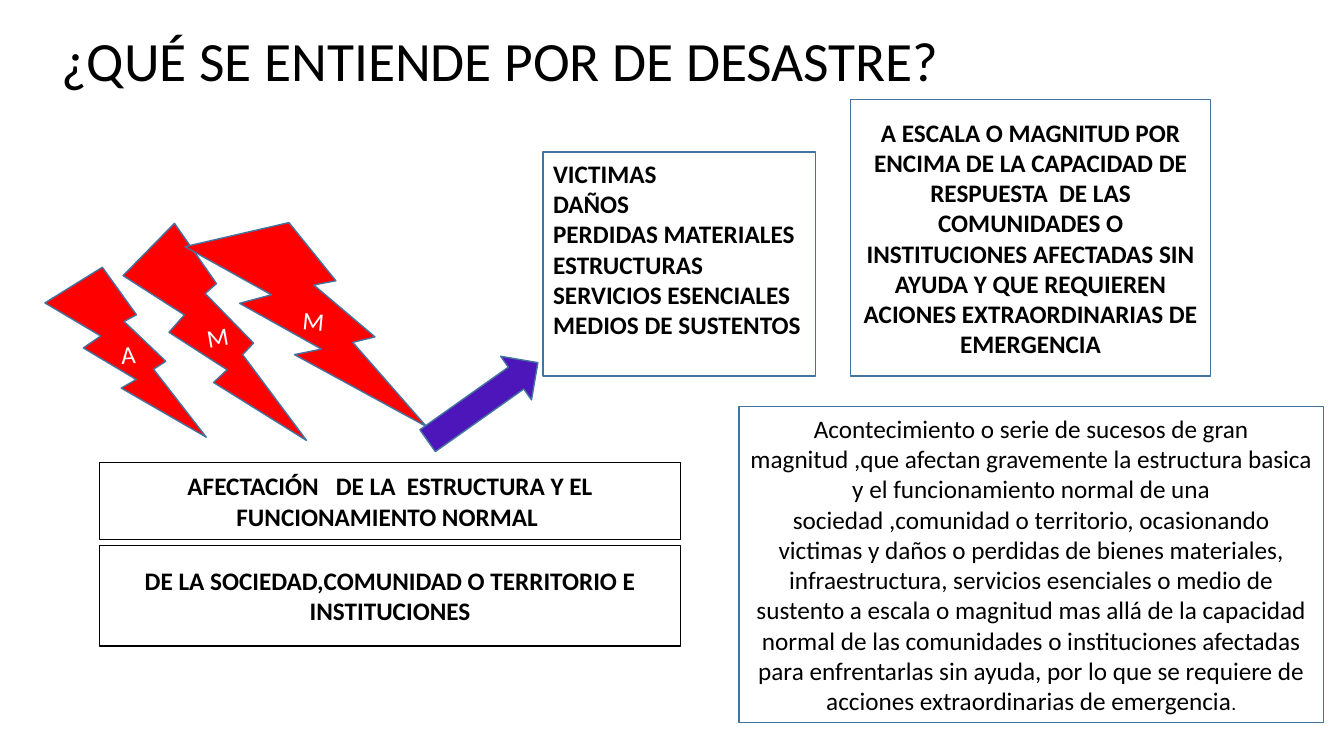
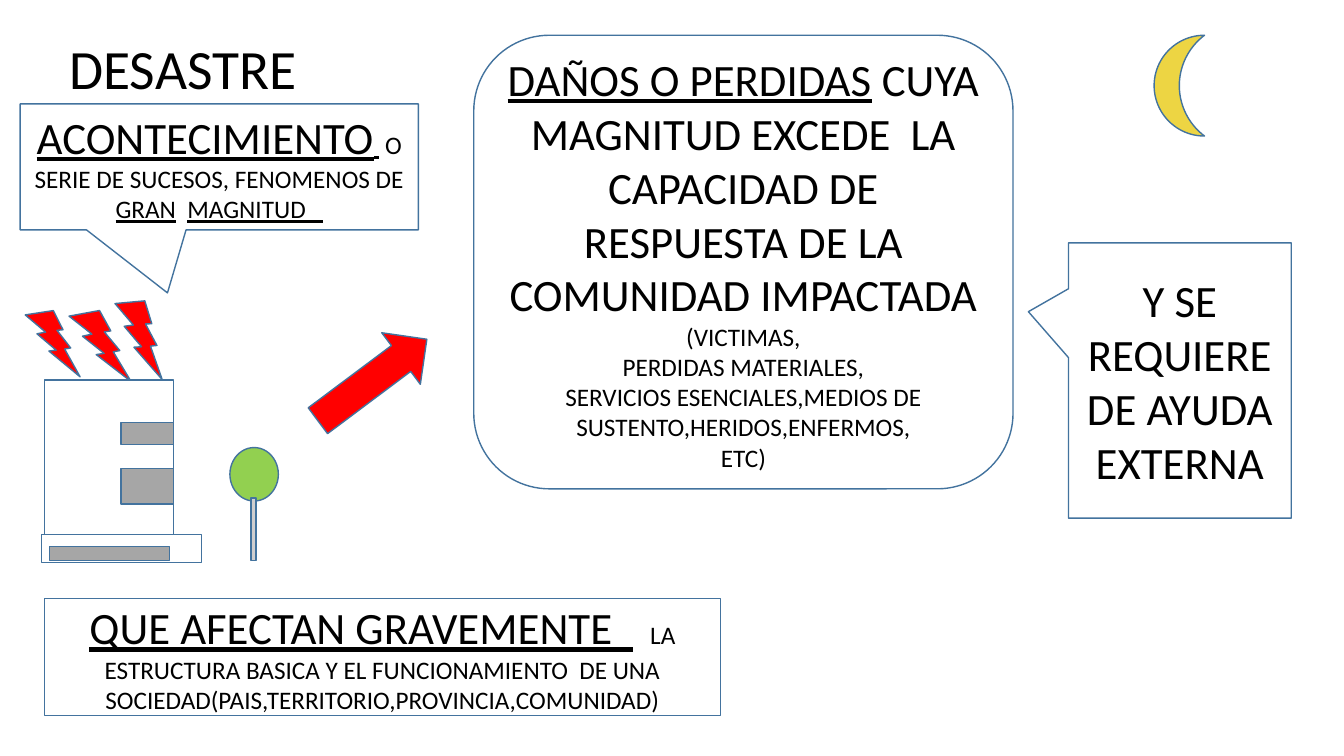
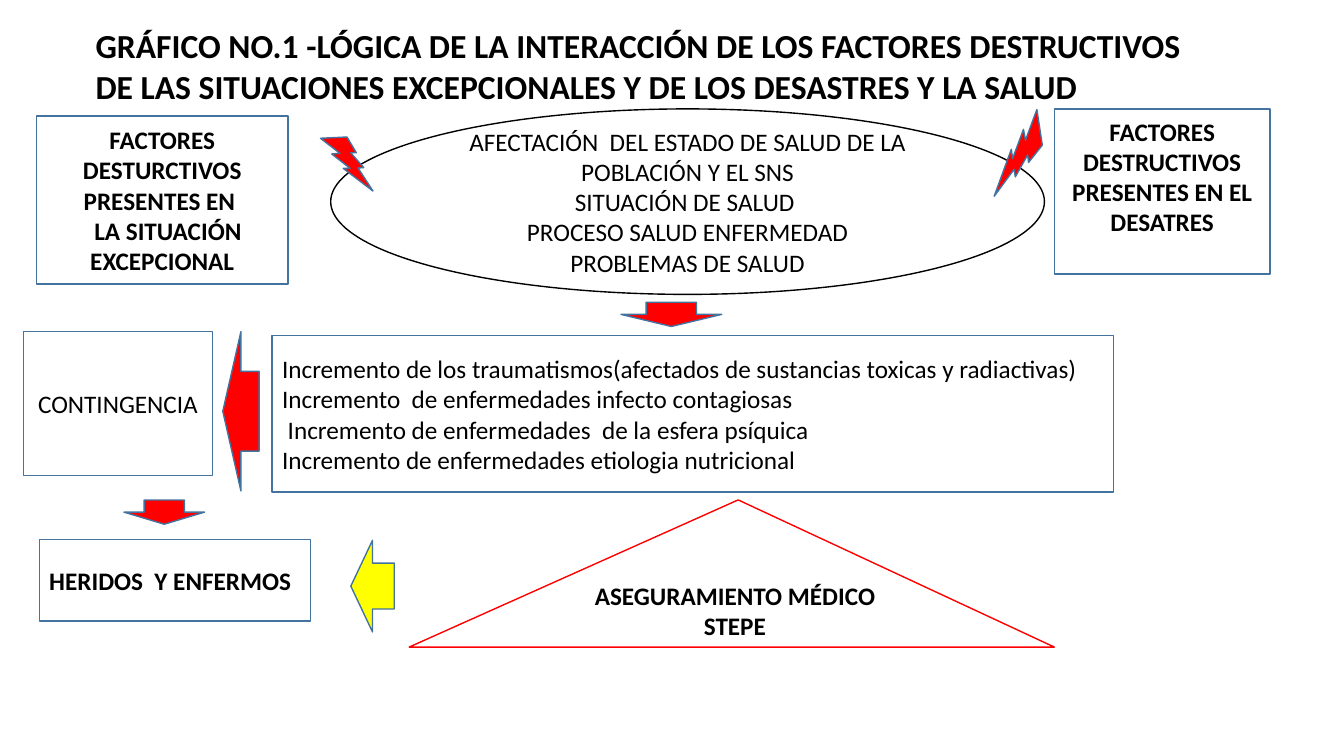
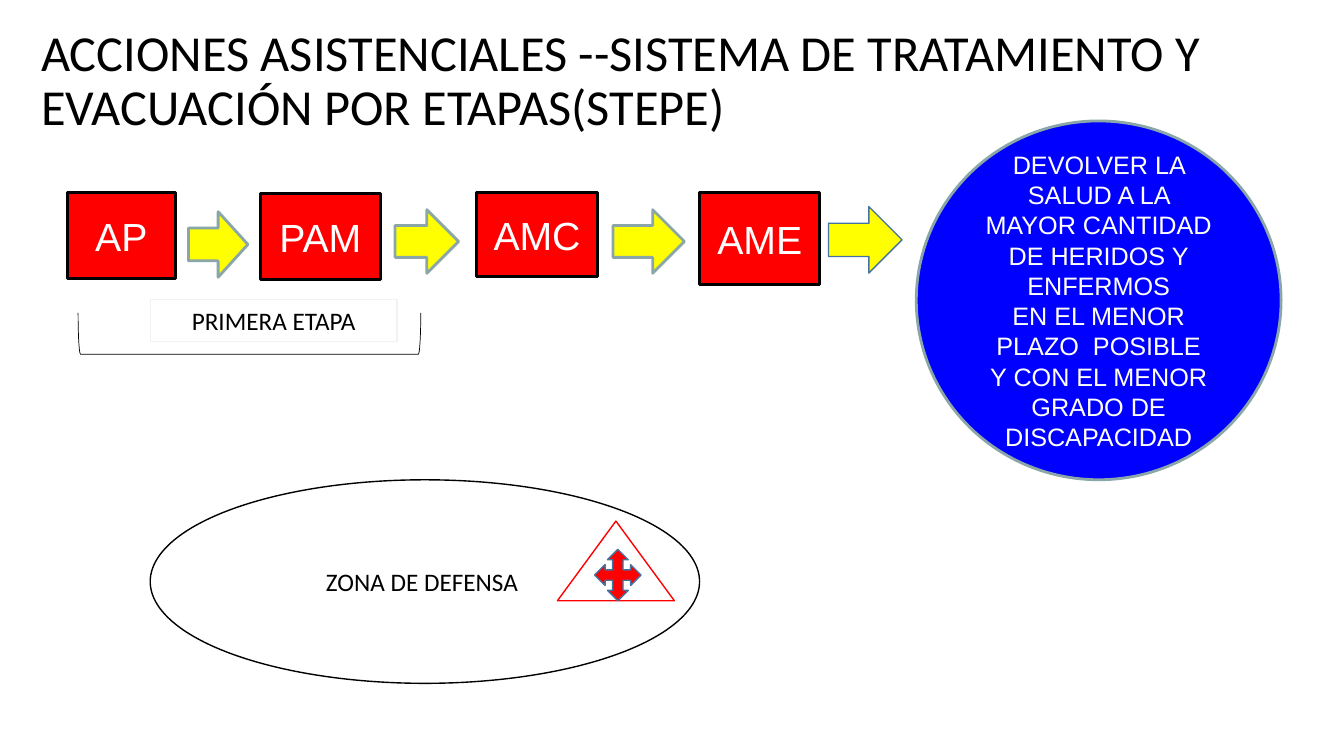
from dataclasses import dataclass

from pptx import Presentation
from pptx.dml.color import RGBColor
from pptx.enum.shapes import MSO_SHAPE
from pptx.enum.text import MSO_ANCHOR, PP_ALIGN
from pptx.util import Pt

RECT = MSO_SHAPE.RECTANGLE
ROUNDED = MSO_SHAPE.ROUNDED_RECTANGLE
ELLIPSE = MSO_SHAPE.OVAL
TRIANGLE = MSO_SHAPE.ISOSCELES_TRIANGLE
BOLT = MSO_SHAPE.LIGHTNING_BOLT
CALLOUT = MSO_SHAPE.RECTANGULAR_CALLOUT
MOON = MSO_SHAPE.MOON
BRACKET = MSO_SHAPE.RIGHT_BRACKET
ARROW_RIGHT = MSO_SHAPE.RIGHT_ARROW
ARROW_LEFT = MSO_SHAPE.LEFT_ARROW
ARROW_DOWN = MSO_SHAPE.DOWN_ARROW
ARROW_QUAD = MSO_SHAPE.QUAD_ARROW
LEFT, CENTER = PP_ALIGN.LEFT, PP_ALIGN.CENTER
TOP, MIDDLE = MSO_ANCHOR.TOP, MSO_ANCHOR.MIDDLE

BLACK = RGBColor(0x00, 0x00, 0x00)
WHITE = RGBColor(0xFF, 0xFF, 0xFF)
RED = RGBColor(0xFF, 0x00, 0x00)
YELLOW = RGBColor(0xFF, 0xFF, 0x00)
BLUE = RGBColor(0x00, 0x00, 0xFF)
VIOLET = RGBColor(0x4D, 0x16, 0xBA)
STEEL = RGBColor(0x43, 0x73, 0x9E)
SAGE = RGBColor(0x8A, 0xA6, 0xA8)
MOONLIGHT = RGBColor(0xED, 0xD5, 0x43)
LEAF = RGBColor(0x92, 0xD0, 0x50)
GRAY = RGBColor(0xA6, 0xA6, 0xA6)
TRUNK = RGBColor(0xD0, 0xCE, 0xCE)
PALE = RGBColor(0xF2, 0xF2, 0xF2)

BODY_FONT, STAGE_FONT = "Calibri", "Arial"
BODY, LARGE = 18, 32


@dataclass
class Run:
    """A piece of text that departs from the style of its paragraph."""
    text: str
    size: float = BODY
    underline: bool = False


def write(frame, paragraphs, size=BODY, bold=False, color=BLACK,
          font=BODY_FONT, align=CENTER, spacing=None):
    """Fill a frame; a paragraph is a string or a list of Run."""
    frame.word_wrap = True
    for index, content in enumerate(paragraphs):
        paragraph = frame.paragraphs[0] if index == 0 else frame.add_paragraph()
        paragraph.alignment = align
        if spacing:
            paragraph.line_spacing = spacing
        runs = [Run(content, size)] if isinstance(content, str) else content
        for part in runs:
            run = paragraph.add_run()
            run.text = part.text
            run.font.name = font
            run.font.size = Pt(part.size)
            run.font.bold = bold
            run.font.underline = part.underline
            run.font.color.rgb = color


def add_heading(slide, box, text, size=39.6, bold=False, anchor=MIDDLE, spacing=0.9):
    frame = slide.shapes.add_textbox(*map(Pt, box)).text_frame
    frame.vertical_anchor = anchor
    write(frame, [text], size, bold, align=LEFT, spacing=spacing)


def add_figure(slide, preset, box, fill=WHITE, line=STEEL, weight=1,
               rotation=0, adjustments=()):
    figure = slide.shapes.add_shape(preset, *map(Pt, box))
    figure.shadow.inherit = False
    figure.rotation = rotation
    for index, value in enumerate(adjustments):
        figure.adjustments[index] = value
    if fill is None:
        figure.fill.background()
    else:
        figure.fill.solid()
        figure.fill.fore_color.rgb = fill
    figure.line.color.rgb = line
    figure.line.width = Pt(weight)
    return figure


def add_panel(slide, box, paragraphs, preset=RECT, line=STEEL, adjustments=(),
              bottom_inset=3.6, **style):
    """White outlined figure with text."""
    panel = add_figure(slide, preset, box, line=line, adjustments=adjustments)
    panel.text_frame.margin_bottom = Pt(bottom_inset)
    write(panel.text_frame, paragraphs, **style)


def add_bolt(slide, box, rotation, letter=None):
    bolt = add_figure(slide, BOLT, box, RED, rotation=rotation)
    if letter:
        write(bolt.text_frame, [letter], color=WHITE)


def build_definition(slide):
    add_heading(slide, (36.7, 20.2, 828, 51), "¿QUÉ SE ENTIENDE POR DE DESASTRE?")
    add_panel(slide, (71.3, 330.5, 414.7, 54.7),
              ["AFECTACIÓN   DE LA  ESTRUCTURA Y EL FUNCIONAMIENTO NORMAL "],
              line=BLACK, bold=True)
    add_panel(slide, (71.3, 389.5, 414.7, 72),
              ["DE LA SOCIEDAD,COMUNIDAD O TERRITORIO E INSTITUCIONES"],
              line=BLACK, bold=True)
    add_bolt(slide, (34.6, 190, 108.7, 126), 356.2, "A")
    add_bolt(slide, (96.5, 156.2, 108.7, 169.2), 350, "M")
    add_bolt(slide, (127.4, 160.6, 184.3, 135.4), 5.6, "M")
    add_figure(slide, ARROW_RIGHT, (296.6, 267.8, 96.5, 38.2), VIOLET, rotation=324.7)
    add_panel(slide, (388, 108.7, 194.4, 159.8),
              ["VICTIMAS", "DAÑOS", "PERDIDAS MATERIALES", "ESTRUCTURAS",
               "SERVICIOS ESENCIALES", "MEDIOS DE SUSTENTOS"],
              bold=True, align=LEFT, bottom_inset=25.2)
    add_panel(slide, (607.7, 71.3, 257, 197.3),
              ["A ESCALA O MAGNITUD POR ENCIMA DE LA CAPACIDAD DE RESPUESTA  DE LAS "
               "COMUNIDADES O INSTITUCIONES AFECTADAS SIN AYUDA Y QUE REQUIEREN "
               "ACIONES EXTRAORDINARIAS DE EMERGENCIA"], bold=True)
    add_panel(slide, (527.8, 290.2, 417.6, 226),
              [[Run("Acontecimiento o serie de sucesos de gran magnitud ,que afectan "
                    "gravemente la estructura basica y el funcionamiento normal de una "
                    "sociedad ,comunidad o territorio, ocasionando victimas y daños o "
                    "perdidas de bienes materiales, infraestructura, servicios esenciales "
                    "o medio de sustento a escala o magnitud mas allá de la capacidad "
                    "normal de las comunidades o instituciones afectadas para "
                    "enfrentarlas sin ayuda, por lo que se requiere de acciones "
                    "extraordinarias de emergencia"),
                Run(".", 14)]])


def build_scene(slide):
    add_heading(slide, (42.5, 25.2, 573, 51.8), "DESASTRE")
    add_panel(slide, (31.7, 427.7, 483, 83.5),
              [[Run("QUE AFECTAN GRAVEMENTE  ", LARGE, True),
                Run("   LA ESTRUCTURA BASICA Y EL FUNCIONAMIENTO  DE UNA "
                    "SOCIEDAD(PAIS,TERRITORIO,PROVINCIA,COMUNIDAD)")]])
    add_bolt(slide, (14.4, 222.5, 48.2, 41.8), 13)
    add_bolt(slide, (46, 222.5, 52.6, 45.4), 11.2)
    add_figure(slide, ARROW_RIGHT, (217.4, 248.4, 97.2, 46), RED, rotation=323.2)
    add_panel(slide, (338.4, 25.2, 385.2, 324),
              [[Run("DAÑOS O PERDIDAS", LARGE, True),
                Run(" CUYA MAGNITUD EXCEDE  LA CAPACIDAD DE RESPUESTA DE LA "
                    "COMUNIDAD IMPACTADA", LARGE)],
               "(VICTIMAS,", "PERDIDAS MATERIALES,",
               "SERVICIOS ESENCIALES,MEDIOS DE SUSTENTO,HERIDOS,ENFERMOS,", "ETC)"],
              preset=ROUNDED)
    add_bolt(slide, (75.6, 215.3, 49.7, 49), 19.2)
    add_panel(slide, (763.2, 173.5, 159.1, 196.6), ["Y SE REQUIERE DE AYUDA EXTERNA"],
              preset=CALLOUT, adjustments=(-0.68, -0.25), size=LARGE)
    add_panel(slide, (14.4, 74.2, 284.4, 90),
              [[Run("ACONTECIMIENTO", LARGE, True), Run(" ", underline=True),
                Run(" O SERIE DE SUCESOS, FENOMENOS DE "),
                Run("GRAN", underline=True), Run("  "),
                Run("MAGNITUD   ", underline=True)]],
              preset=CALLOUT, adjustments=(-0.13, 1))
    add_figure(slide, MOON, (824.4, 25.2, 36, 72), MOONLIGHT)

    house = (31.7, 271.4, 92.2, 111.6)
    porch = (29.5, 381.6, 114.5, 20.2)
    for wall in (house, porch):
        add_figure(slide, RECT, wall)
    upper_window = (86.4, 301.7, 37.4, 15.8)
    lower_window = (86.4, 334.8, 37.4, 25.2)
    doorstep = (35.3, 390.2, 85.7, 10.1)
    for detail in (upper_window, lower_window, doorstep):
        add_figure(slide, RECT, detail, GRAY)
    add_figure(slide, ELLIPSE, (164.2, 319.7, 34.6, 38.2), LEAF)
    add_figure(slide, RECT, (179.3, 355.7, 3.6, 44.6), TRUNK)


def build_interaction(slide):
    add_panel(slide, (194.4, 239.8, 601.2, 111.6),
              ["Incremento de los traumatismos(afectados de sustancias toxicas y radiactivas)",
               "Incremento  de enfermedades infecto contagiosas",
               " Incremento de enfermedades  de la esfera psíquica",
               "Incremento de enfermedades etiologia nutricional"], align=LEFT)
    add_panel(slide, (25.9, 82.8, 180, 120.2),
              ["FACTORES DESTURCTIVOS PRESENTES EN ", "  LA SITUACIÓN", "EXCEPCIONAL"],
              bold=True)
    add_panel(slide, (753.1, 77.8, 154.1, 118.1),
              ["FACTORES DESTRUCTIVOS PRESENTES EN EL DESATRES"],
              bold=True, bottom_inset=25.2)
    add_panel(slide, (28.1, 385.2, 193.7, 58.3), ["HERIDOS  Y ENFERMOS"],
              bold=True, align=LEFT)
    add_figure(slide, ARROW_LEFT, (108.7, 337, 17.3, 57.6), RED, rotation=270)
    add_panel(slide, (236.2, 77.8, 509.8, 132.5),
              ["AFECTACIÓN  DEL ESTADO DE SALUD DE LA POBLACIÓN Y EL SNS",
               "SITUACIÓN DE SALUD ", "PROCESO SALUD ENFERMEDAD", "PROBLEMAS DE SALUD"],
              preset=ELLIPSE, line=BLACK)
    add_bolt(slide, (225.4, 98.6, 46, 32.4), 15.1)
    add_bolt(slide, (696.2, 93.6, 64, 31.7), 94.1)
    add_figure(slide, ARROW_RIGHT, (470.9, 188.6, 17.3, 72), RED, rotation=90)
    add_heading(slide, (61.2, 14.4, 795, 65.5),
                "GRÁFICO NO.1 -LÓGICA DE LA INTERACCIÓN DE LOS FACTORES DESTRUCTIVOS "
                "DE LAS SITUACIONES EXCEPCIONALES Y DE LOS DESASTRES Y LA SALUD",
                size=24, bold=True, anchor=TOP, spacing=1)
    add_panel(slide, (292.3, 357.1, 460.8, 105.1), ["ASEGURAMIENTO MÉDICO", "STEPE"],
              preset=TRIANGLE, line=RED, adjustments=(0.51,), bold=True)
    add_figure(slide, ARROW_LEFT, (250.6, 385.9, 31, 65.5), YELLOW)
    add_panel(slide, (16.6, 236.9, 135.4, 103), ["CONTINGENCIA"])
    add_figure(slide, ARROW_DOWN, (115.2, 280.8, 113.8, 25.9), RED, rotation=90)


def build_stages(slide):
    add_heading(slide, (22.3, 20.9, 909.4, 75.6),
                "ACCIONES ASISTENCIALES --SISTEMA DE TRATAMIENTO Y EVACUACIÓN POR "
                "ETAPAS(STEPE)", size=36)
    stages = (("AP", (48.2, 137.5, 77, 61.2)), ("PAM", (185.8, 138.2, 86, 61.2)),
              ("AMC", (340.6, 137.5, 86, 59.8)), ("AME", (499.7, 137.5, 86, 65.5)))
    for name, box in stages:
        stage = add_figure(slide, RECT, box, RED, BLACK, 2)
        write(stage.text_frame, [name], 28, color=WHITE, font=STAGE_FONT)
    for box in ((134.6, 151.2, 42.5, 46.8), (282.2, 149.8, 45.4, 45.4),
                (437.8, 149.8, 51.1, 45.4)):
        add_figure(slide, ARROW_RIGHT, box, YELLOW, SAGE, 2)
    add_figure(slide, BRACKET, (163.4, 115.9, 29.5, 244.8), None, BLACK, 0.5,
               rotation=90, adjustments=(0.06,))
    first_stage = add_figure(slide, RECT, (107.3, 213.8, 176.4, 30.2), None, PALE)
    write(first_stage.text_frame, ["PRIMERA ETAPA"])
    add_panel(slide, (107.3, 342.7, 392.4, 145.4), ["ZONA DE DEFENSA "],
              preset=ELLIPSE, line=BLACK)
    add_figure(slide, TRIANGLE, (398.2, 372.2, 83.5, 56.9), line=RED)
    add_figure(slide, ARROW_QUAD, (424.8, 392.4, 33.1, 36.7), RED)
    goal = add_figure(slide, ELLIPSE, (654.5, 86.4, 260.6, 256.3), BLUE, SAGE, 2)
    write(goal.text_frame,
          ["DEVOLVER LA SALUD A LA MAYOR CANTIDAD DE HERIDOS Y", "ENFERMOS",
           "EN EL MENOR PLAZO  POSIBLE", "Y CON EL MENOR GRADO DE DISCAPACIDAD"],
          color=WHITE, font=STAGE_FONT)
    add_figure(slide, ARROW_RIGHT, (591.8, 147.6, 52.6, 47.5), YELLOW)


def main():
    deck = Presentation()
    deck.slide_width, deck.slide_height = Pt(960), Pt(540)
    blank = deck.slide_layouts[6]
    for build in (build_definition, build_scene, build_interaction, build_stages):
        build(deck.slides.add_slide(blank))
    deck.save("out.pptx")


if __name__ == "__main__":
    main()
